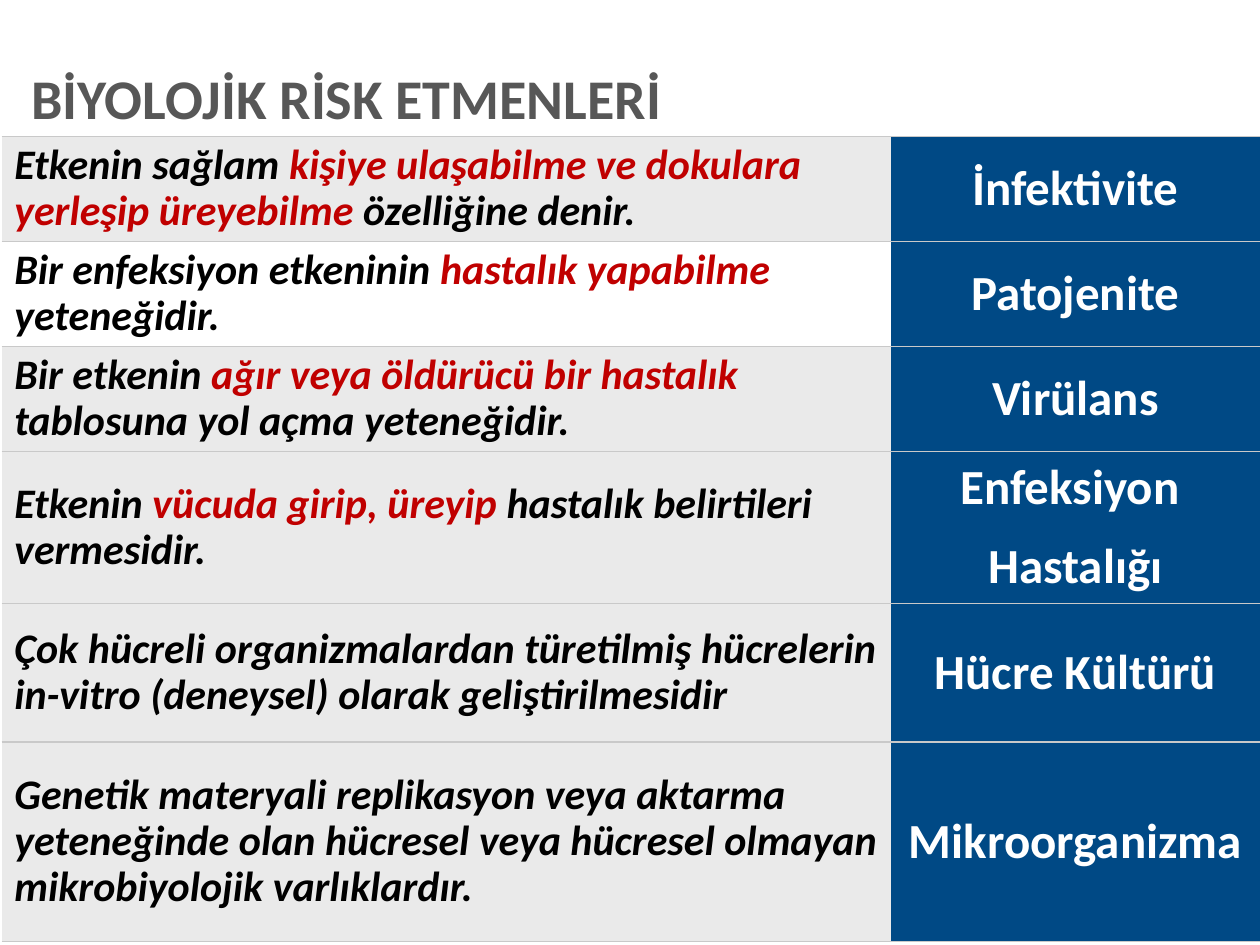
"""Build the slide of biological risk terms and their definitions."""
from dataclasses import dataclass

from lxml import etree
from pptx import Presentation
from pptx.dml.color import RGBColor
from pptx.enum.text import MSO_ANCHOR, MSO_AUTO_SIZE, PP_ALIGN
from pptx.oxml import parse_xml
from pptx.oxml.ns import nsdecls
from pptx.util import Pt

MIDDLE = MSO_ANCHOR.MIDDLE
LEFT, CENTER = PP_ALIGN.LEFT, PP_ALIGN.CENTER
NO_FIT = MSO_AUTO_SIZE.NONE


@dataclass(frozen=True)
class Theme:
    font: str = "Calibri"
    title: str = "575757"
    ink: str = "000000"
    red: str = "C00000"
    white: str = "FFFFFF"
    gray: str = "EAEAEA"
    blue: str = "004985"
    rule: str = "C9C9C9"
    head: int = 32
    term: int = 28
    body: int = 24


theme = Theme()


def add_run(para, text, size, color, slant=False):
    run = para.add_run()
    run.text = text
    font = run.font
    font.name, font.size = theme.font, Pt(size)
    font.bold, font.italic = True, slant
    font.color.rgb = RGBColor.from_string(color)


def style_cell(cell, color):
    cell.fill.solid()
    cell.fill.fore_color.rgb = RGBColor.from_string(color)
    cell.vertical_anchor = MIDDLE
    cell.margin_left = cell.margin_right = Pt(7.2)
    cell.margin_top = cell.margin_bottom = Pt(3.6)
    solid = f'<a:solidFill><a:srgbClr val="{theme.rule}"/></a:solidFill>'
    sides = {"L": "<a:noFill/>", "R": "<a:noFill/>", "T": solid, "B": solid}
    props = cell._tc.get_or_add_tcPr()
    for spot, (side, paint) in enumerate(sides.items()):
        line = etree.Element("none")
        line = parse_xml(f'<a:ln{side} {nsdecls("a")} w="12700">{paint}</a:ln{side}>')
        props.insert(spot, line)


rows = [
    (60, theme.gray, ["İnfektivite"],
     ["Etkenin sağlam ", "kişiye ulaşabilme ve dokulara yerleşip üreyebilme",
      " özelliğine denir."]),
    (60, theme.white, ["Patojenite"],
     ["Bir enfeksiyon etkeninin ", "hastalık yapabilme ", "yeteneğidir."]),
    (60, theme.gray, ["Virülans"],
     ["Bir etkenin ", "ağır veya öldürücü bir hastalık ",
      "tablosuna yol açma yeteneğidir."]),
    (87, theme.gray, ["Enfeksiyon ", "Hastalığı"],
     ["Etkenin ", "vücuda girip, üreyip ", "hastalık belirtileri vermesidir."]),
    (79, theme.gray, ["Hücre Kültürü"],
     ["Çok hücreli organizmalardan türetilmiş hücrelerin in-vitro (deneysel) "
      "olarak geliştirilmesidir"]),
    (114, theme.gray, ["Mikroorganizma"],
     ["Genetik materyali replikasyon veya aktarma yeteneğinde olan hücresel "
      "veya hücresel olmayan mikrobiyolojik varlıklardır."]),
]

deck = Presentation()
deck.slide_width, deck.slide_height = Pt(720), Pt(540)
slide = deck.slides.add_slide(deck.slide_layouts[5])

title = slide.shapes.title
title.left, title.top, title.width, title.height = Pt(18), Pt(32.4), Pt(694), Pt(51)
frame = title.text_frame
frame.word_wrap, frame.auto_size, frame.vertical_anchor = True, NO_FIT, MIDDLE
frame.margin_left = frame.margin_right = Pt(0)
frame.margin_top = frame.margin_bottom = Pt(3.6)
para = frame.paragraphs[0]
para.alignment, para.line_spacing = LEFT, 0.9
add_run(para, "BİYOLOJİK RİSK ETMENLERİ", theme.head, theme.title)

total = sum(row[0] for row in rows)
table = slide.shapes.add_table(len(rows), 2, Pt(1), Pt(78), Pt(719), Pt(total)).table
table.first_row = table.horz_banding = False
table.columns[0].width, table.columns[1].width = Pt(508), Pt(211)

for index, (height, fill, terms, parts) in enumerate(rows):
    table.rows[index].height = Pt(height)
    note, name = table.cell(index, 0), table.cell(index, 1)
    style_cell(note, fill)
    style_cell(name, theme.blue)

    para = note.text_frame.paragraphs[0]
    para.line_spacing = 0.9
    for spot, text in enumerate(parts):
        color = theme.red if spot == 1 else theme.ink
        add_run(para, text, theme.body, color, True)

    frame = name.text_frame
    for spot, text in enumerate(terms):
        para = frame.add_paragraph() if spot else frame.paragraphs[0]
        para.alignment = CENTER
        if spot:
            para.space_before = Pt(11.2)
        add_run(para, text, theme.term, theme.white)

deck.save("out.pptx")
